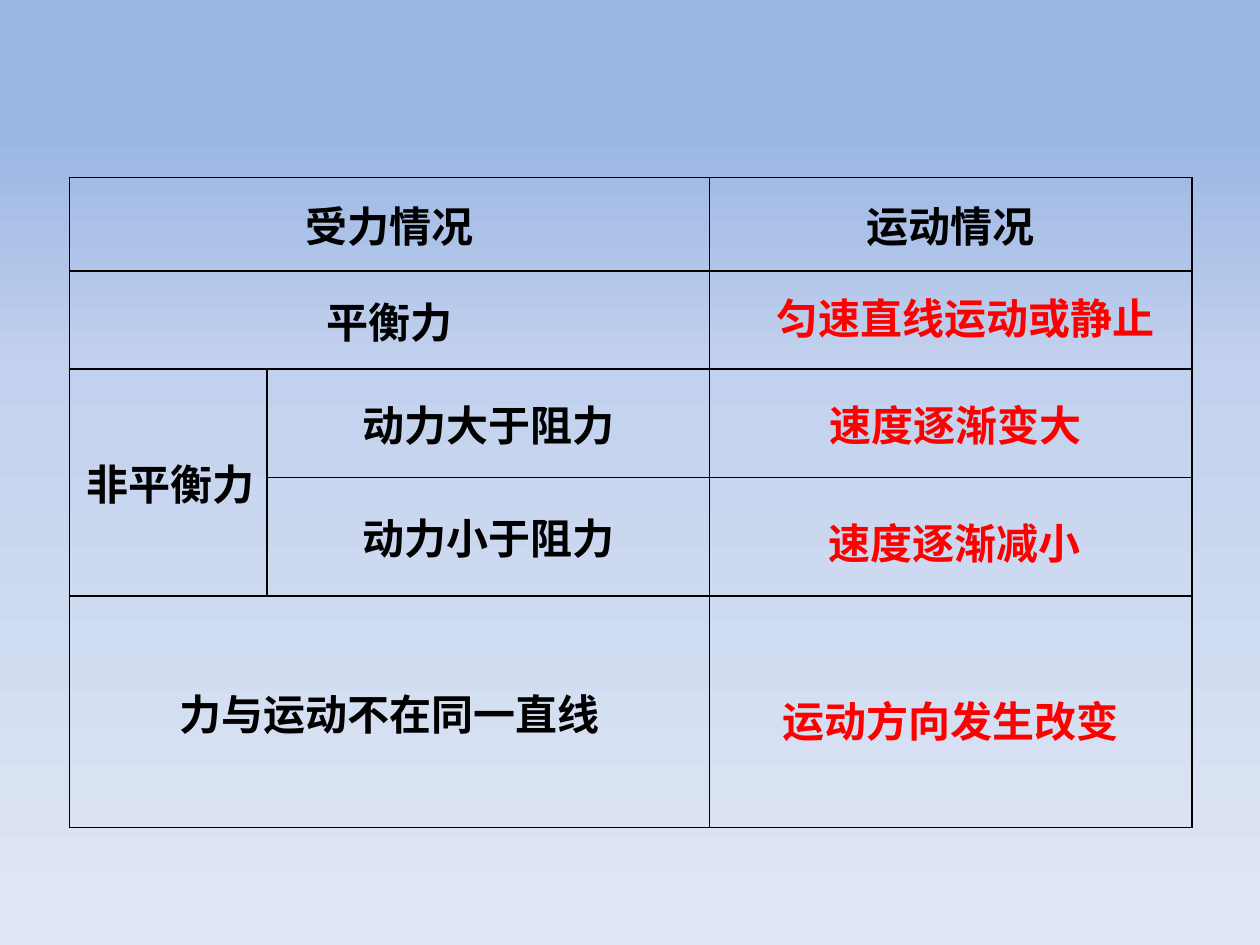
from copy import deepcopy

from lxml.etree import SubElement
from pptx import Presentation
from pptx.dml.color import RGBColor
from pptx.enum.text import MSO_ANCHOR as Anchor, MSO_AUTO_SIZE as AutoSize, PP_ALIGN as Align
from pptx.oxml.ns import qn
from pptx.util import Inches, Pt

BACKGROUND = [(0.13, "9AB5E4"), (0.39, "C2D1ED"), (1, "E1E8F5")]
COLUMNS = [1.57, 3.51, 3.83]
ROWS = [0.74, 0.78, 0.86, 0.94, 1.84]
MERGES = [((0, 0), (0, 1)), ((1, 0), (1, 1)), ((2, 0), (3, 0)), ((4, 0), (4, 1))]
FORCES = [
    (0, 0, "受力情况", Align.CENTER),
    (0, 2, "运动情况", Align.CENTER),
    (1, 0, "平衡力", Align.CENTER),
    (2, 0, "非平衡力", Align.RIGHT),
    (2, 1, "动力大于阻力", Align.CENTER),
    (3, 1, "动力小于阻力", Align.CENTER),
    (4, 0, "力与运动不在同一直线", Align.CENTER),
]
MOTIONS = [
    ((5.94, 2.27, 3.44, 0.51), "匀速直线运动或静止", Align.CENTER),
    ((6.17, 3.12, 2.83, 0.51), "速度逐渐变大", Align.CENTER),
    ((6.48, 4.06, 2.34, 0.51), "速度逐渐减小", Align.LEFT),
    ((5.78, 5.47, 3.52, 0.51), "运动方向发生改变", Align.CENTER),
]


def rgb(value):
    return RGBColor.from_string(value)


def write(frame, text, color="000000", size=24, align=Align.CENTER):
    paragraph = frame.paragraphs[0]
    paragraph.alignment = align
    run = paragraph.add_run()
    run.text = text
    run.font.name = "Arial"
    run.font.size = Pt(size)
    run.font.bold = True
    run.font.color.rgb = rgb(color)


def paint_background(slide):
    fill = slide.background.fill
    fill.gradient()
    fill.gradient_angle = 270
    stop_list = slide.element.find(".//" + qn("a:gsLst"))
    stop_list.append(deepcopy(stop_list[-1]))
    for stop, (position, color) in zip(fill.gradient_stops, BACKGROUND):
        stop.position = position
        stop.color.rgb = rgb(color)


def draw_borders(cell, color="000000", width=1):
    properties = cell._tc.get_or_add_tcPr()
    for side in ("a:lnL", "a:lnR", "a:lnT", "a:lnB"):
        line = SubElement(properties, qn(side), w=str(Pt(width)))
        solid = SubElement(line, qn("a:solidFill"))
        SubElement(solid, qn("a:srgbClr"), val=color)


def add_force_table(slide, box):
    shape = slide.shapes.add_table(len(ROWS), len(COLUMNS), *map(Inches, box))
    table = shape.table
    table.first_row = table.horz_banding = False
    for column, width in zip(table.columns, COLUMNS):
        column.width = Inches(width)
    for row, height in zip(table.rows, ROWS):
        row.height = Inches(height)
    for cell in table.iter_cells():
        draw_borders(cell)
        cell.fill.background()
        cell.vertical_anchor = Anchor.MIDDLE
    for first, last in MERGES:
        table.cell(*first).merge(table.cell(*last))
    for row, column, text, align in FORCES:
        write(table.cell(row, column).text_frame, text, align=align)


def add_motion(slide, box, text, align):
    frame = slide.shapes.add_textbox(*map(Inches, box)).text_frame
    frame.word_wrap = True
    frame.auto_size = AutoSize.SHAPE_TO_FIT_TEXT
    write(frame, text, color="FF0000", align=align)


def main():
    presentation = Presentation()
    presentation.slide_width = Inches(10)
    presentation.slide_height = Inches(7.5)
    slide = presentation.slides.add_slide(presentation.slide_layouts[6])
    paint_background(slide)
    add_force_table(slide, (0.55, 1.41, sum(COLUMNS), sum(ROWS)))
    for box, text, align in MOTIONS:
        add_motion(slide, box, text, align)
    presentation.save("out.pptx")


if __name__ == "__main__":
    main()
